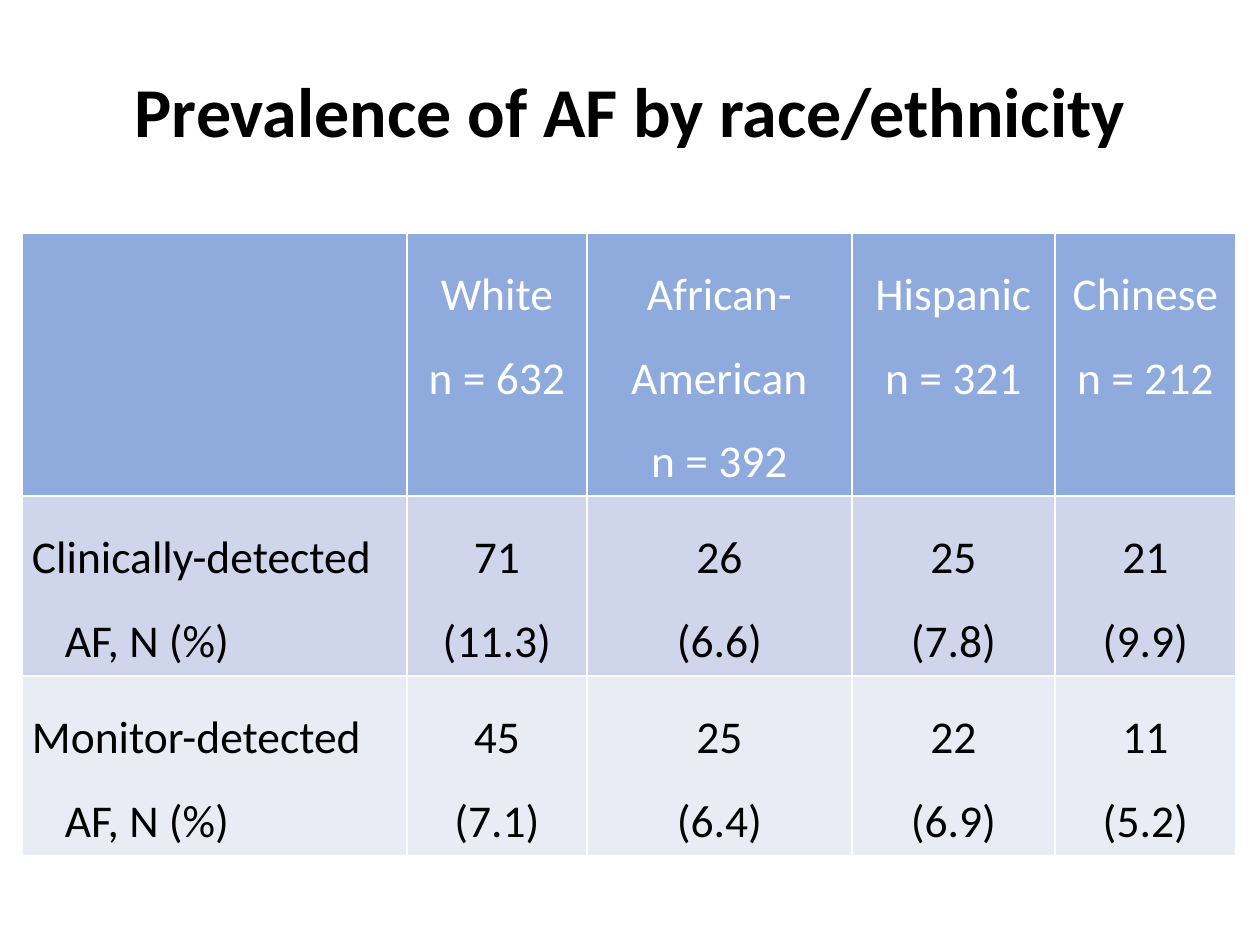
from pptx import Presentation
from pptx.dml.color import RGBColor
from pptx.enum.text import MSO_ANCHOR, PP_ALIGN
from pptx.util import Emu, Pt

CENTER, LEFT = PP_ALIGN.CENTER, PP_ALIGN.LEFT
MIDDLE = MSO_ANCHOR.MIDDLE

# Content: each cell is a list of paragraphs
TITLE = "Prevalence of AF by race/ethnicity"
GROUPS = [
    [],
    ["White", "n = 632"],
    ["African-American", "n = 392"],
    ["Hispanic", "n = 321"],
    ["Chinese", "n = 212"],
]
CLINICAL = [
    ["Clinically-detected AF, N (%)"],
    ["71", "(11.3)"], ["26", "(6.6)"], ["25", "(7.8)"], ["21", "(9.9)"],
]
MONITOR = [
    ["Monitor-detected AF, N (%)"],
    ["45", "(7.1)"], ["25", "(6.4)"], ["22", "(6.9)"], ["11", "(5.2)"],
]

THEME = {
    "font": "Calibri",
    "title_size": 40,
    "table_size": 26,
    "line_spacing": 1.5,
    "black": "000000",
    "white": "FFFFFF",
    "header": "8FAADC",
    "band_dark": "CFD5EA",
    "band_light": "E9EBF5",
}

# Rows: content, fill, text colour, height in px
ROWS = [
    (GROUPS, "header", "white", 262),
    (CLINICAL, "band_dark", "black", 180),
    (MONITOR, "band_light", "black", 179),
]
COLUMN_WIDTHS = [385, 180, 265, 203, 181]
TITLE_BOX = (63, 47, 1134, 125)
TABLE_ORIGIN = (22, 233)
CELL_MARGIN = 10
HANGING = 33


def px(length):
    return Emu(round(length * 914400 / 126))


def color(name):
    return RGBColor.from_string(THEME[name])


def set_font(font, size, color_name, bold=False):
    values = {"name": THEME["font"], "size": Pt(THEME[size]), "bold": bold}
    for attribute, value in values.items():
        setattr(font, attribute, value)
    font.color.rgb = color(color_name)


def add_title(slide):
    title = slide.shapes.title
    for side, length in zip(("left", "top", "width", "height"), TITLE_BOX):
        setattr(title, side, px(length))
    frame = title.text_frame
    frame.text = TITLE
    frame.vertical_anchor = MIDDLE
    frame.paragraphs[0].alignment = CENTER
    set_font(frame.paragraphs[0].runs[0].font, "title_size", "black", bold=True)


def fill_cell(cell, lines, fill, text_color, is_label):
    cell.fill.solid()
    cell.fill.fore_color.rgb = color(fill)
    cell.margin_left = cell.margin_right = px(CELL_MARGIN)
    if not lines:
        return
    cell.text = "\n".join(lines)
    for paragraph in cell.text_frame.paragraphs:
        paragraph.alignment = LEFT if is_label else CENTER
        paragraph.line_spacing = THEME["line_spacing"]
        set_font(paragraph.runs[0].font, "table_size", text_color)
        if is_label:
            # Hanging indent for the wrapped row label
            properties = paragraph._p.get_or_add_pPr()
            properties.set("marL", str(px(HANGING)))
            properties.set("indent", str(-px(HANGING)))


def add_prevalence_table(slide):
    heights = [row[-1] for row in ROWS]
    table = slide.shapes.add_table(
        len(ROWS), len(COLUMN_WIDTHS), *map(px, TABLE_ORIGIN),
        px(sum(COLUMN_WIDTHS)), px(sum(heights))).table
    for column, width in zip(table.columns, COLUMN_WIDTHS):
        column.width = px(width)
    for row, (cells, fill, text_color, height) in zip(table.rows, ROWS):
        row.height = px(height)
        for index, lines in enumerate(cells):
            fill_cell(row.cells[index], lines, fill, text_color, index == 0)


def main():
    deck = Presentation()
    deck.slide_width, deck.slide_height = px(1260), px(945)
    slide = deck.slides.add_slide(deck.slide_layouts[5])
    add_title(slide)
    add_prevalence_table(slide)
    deck.save("out.pptx")


if __name__ == "__main__":
    main()
